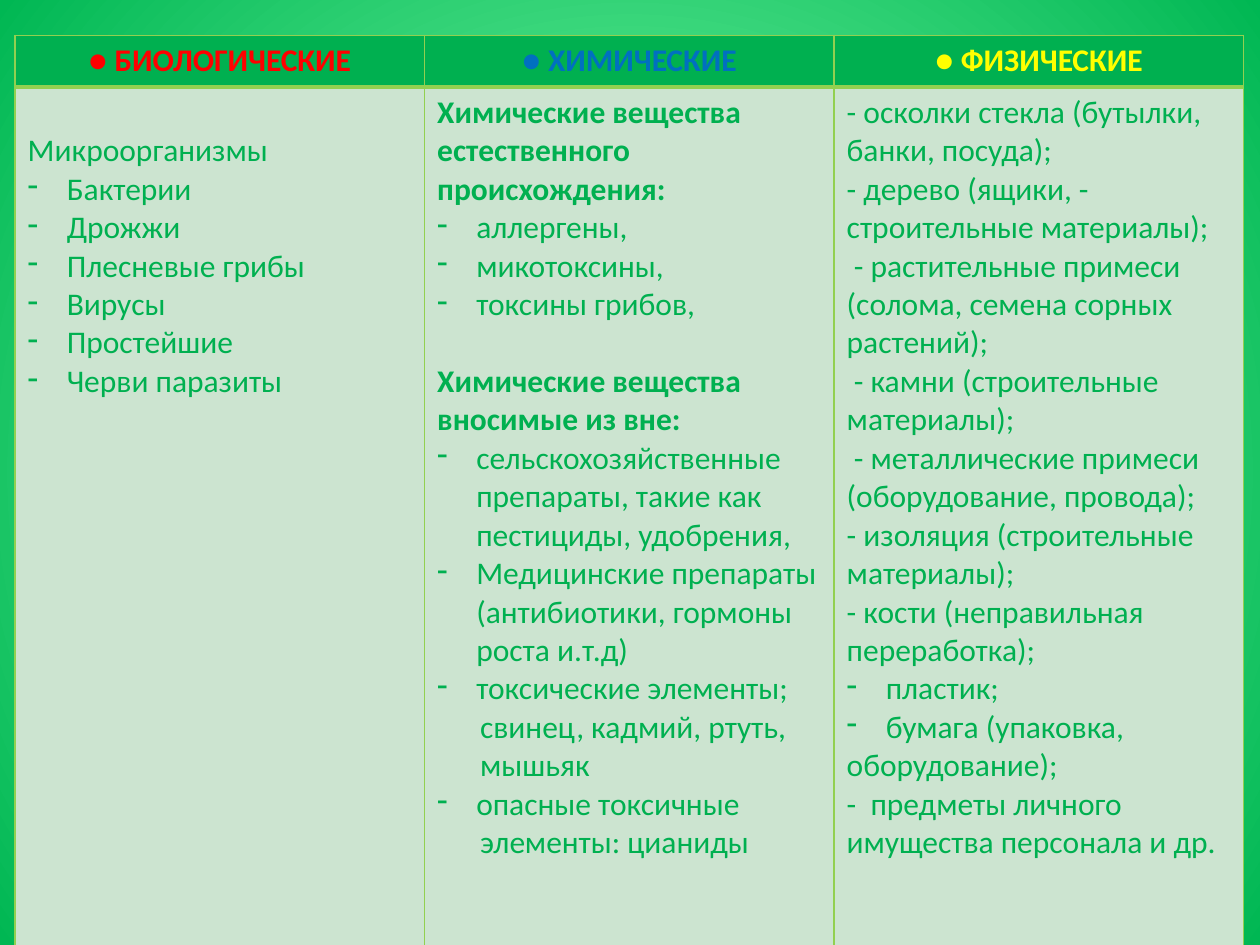
"""Build a slide with a table of biological, chemical and physical hazards."""
import lxml.etree
import pptx
import pptx.dml.color
import pptx.enum.text
import pptx.oxml.ns
import pptx.util

GREEN, LIME, PALE = "00B050", "92D050", "CCE4D0"
LINE_HEIGHT = 22
COLUMN_WIDTH, HEADER_HEIGHT, BODY_HEIGHT = 3.25, 0.41, 6.85
INDENTS = {"head": (0, 0), "plain": (0, 0), "dash": (0.31, -0.31), "inset": (0.34, 0)}

COLUMNS = [
    ("● БИОЛОГИЧЕСКИЕ", "FF0000", 1, [
        ("plain", "Микроорганизмы"),
        ("dash", "Бактерии"),
        ("dash", "Дрожжи"),
        ("dash", "Плесневые грибы"),
        ("dash", "Вирусы"),
        ("dash", "Простейшие"),
        ("dash", "Черви паразиты"),
    ]),
    ("● ХИМИЧЕСКИЕ", "0070C0", 0, [
        ("head", "Химические вещества естественного происхождения:"),
        ("dash", "аллергены,"),
        ("dash", "микотоксины,"),
        ("dash", "токсины грибов,"),
        ("head", "Химические вещества вносимые из вне:"),
        ("dash", "сельскохозяйственные препараты, такие как пестициды, удобрения,"),
        ("dash", "Медицинские препараты (антибиотики, гормоны роста и.т.д)"),
        ("dash", "токсические элементы;"),
        ("inset", "свинец, кадмий, ртуть,"),
        ("inset", "мышьяк"),
        ("dash", "опасные токсичные"),
        ("inset", "элементы: цианиды"),
    ]),
    ("● ФИЗИЧЕСКИЕ", "FFFF00", 0, [
        ("plain", "- осколки стекла (бутылки, банки, посуда);"),
        ("plain", "- дерево (ящики, - строительные материалы);"),
        ("plain", " - растительные примеси (солома, семена сорных растений);"),
        ("plain", " - камни (строительные материалы);"),
        ("plain", " - металлические примеси (оборудование, провода);"),
        ("plain", "- изоляция (строительные материалы);"),
        ("plain", "- кости (неправильная переработка);"),
        ("dash", "пластик;"),
        ("dash", "бумага (упаковка,"),
        ("plain", "оборудование);"),
        ("plain", "-  предметы личного имущества персонала и др."),
    ]),
]


def paint(color_format, value):
    color_format.rgb = pptx.dml.color.RGBColor.from_string(value)


def add_element(parent, tag, position=None, **attributes):
    element = lxml.etree.Element(pptx.oxml.ns.qn(tag), attributes)
    parent.insert(len(parent) if position is None else position, element)
    return element


deck = pptx.Presentation()
deck.slide_width = pptx.util.Inches(10)
deck.slide_height = pptx.util.Inches(7.5)
page = deck.slides.add_slide(deck.slide_layouts[6])

backdrop = page.background.fill
backdrop.gradient()
for stop, color, position in zip(backdrop.gradient_stops, ("85FFAF", "00B753"), (0, 1)):
    paint(stop.color, color)
    stop.position = position
gradient = page.background._cSld.find(".//" + pptx.oxml.ns.qn("a:gradFill"))
gradient.remove(gradient.find(pptx.oxml.ns.qn("a:lin")))
circle = add_element(gradient, "a:path", 1, path="circle")
add_element(circle, "a:fillToRect", l="50000", t="50000", r="50000", b="50000")

table = page.shapes.add_table(
    2, len(COLUMNS), pptx.util.Inches(0.12), pptx.util.Inches(0.28),
    pptx.util.Inches(COLUMN_WIDTH * len(COLUMNS)),
    pptx.util.Inches(HEADER_HEIGHT + BODY_HEIGHT)).table
table.horz_banding = False
table.rows[0].height = pptx.util.Inches(HEADER_HEIGHT)
table.rows[1].height = pptx.util.Inches(BODY_HEIGHT)

for column, (title, title_color, blank_lines, lines) in enumerate(COLUMNS):
    table.columns[column].width = pptx.util.Inches(COLUMN_WIDTH)
    header, body = table.cell(0, column), table.cell(1, column)
    body.margin_top = pptx.util.Inches(0.05) + pptx.util.Pt(LINE_HEIGHT * blank_lines)

    for cell, fill, thick_side in ((header, GREEN, "a:lnB"), (body, PALE, "a:lnT")):
        cell.fill.solid()
        paint(cell.fill.fore_color, fill)
        properties = cell._tc.get_or_add_tcPr()
        for position, side in enumerate(("a:lnL", "a:lnR", "a:lnT", "a:lnB")):
            width = pptx.util.Pt(3 if side == thick_side else 1)
            border = add_element(properties, side, position, w=str(int(width)))
            add_element(add_element(border, "a:solidFill"), "a:srgbClr", val=LIME)

    entries = [(header, "head", title, title_color)]
    entries += [(body, kind, text, GREEN) for kind, text in lines]
    for order, (cell, kind, text, color) in enumerate(entries):
        para = cell.text_frame.paragraphs[0] if order < 2 else cell.text_frame.add_paragraph()
        para.text = text
        left, first = INDENTS[kind]
        settings = para._p.get_or_add_pPr()
        settings.set("marL", str(int(pptx.util.Inches(left))))
        settings.set("indent", str(int(pptx.util.Inches(first))))
        if kind == "dash":
            add_element(settings, "a:buChar", char="-")
        if cell is header:
            para.alignment = pptx.enum.text.PP_ALIGN.CENTER
        elif kind == "head" and order > 1:
            para.space_before = pptx.util.Pt(LINE_HEIGHT)
        para.font.name = "Calibri"
        para.font.size = pptx.util.Pt(18)
        para.font.bold = kind == "head"
        paint(para.font.color, color)

deck.save("out.pptx")
